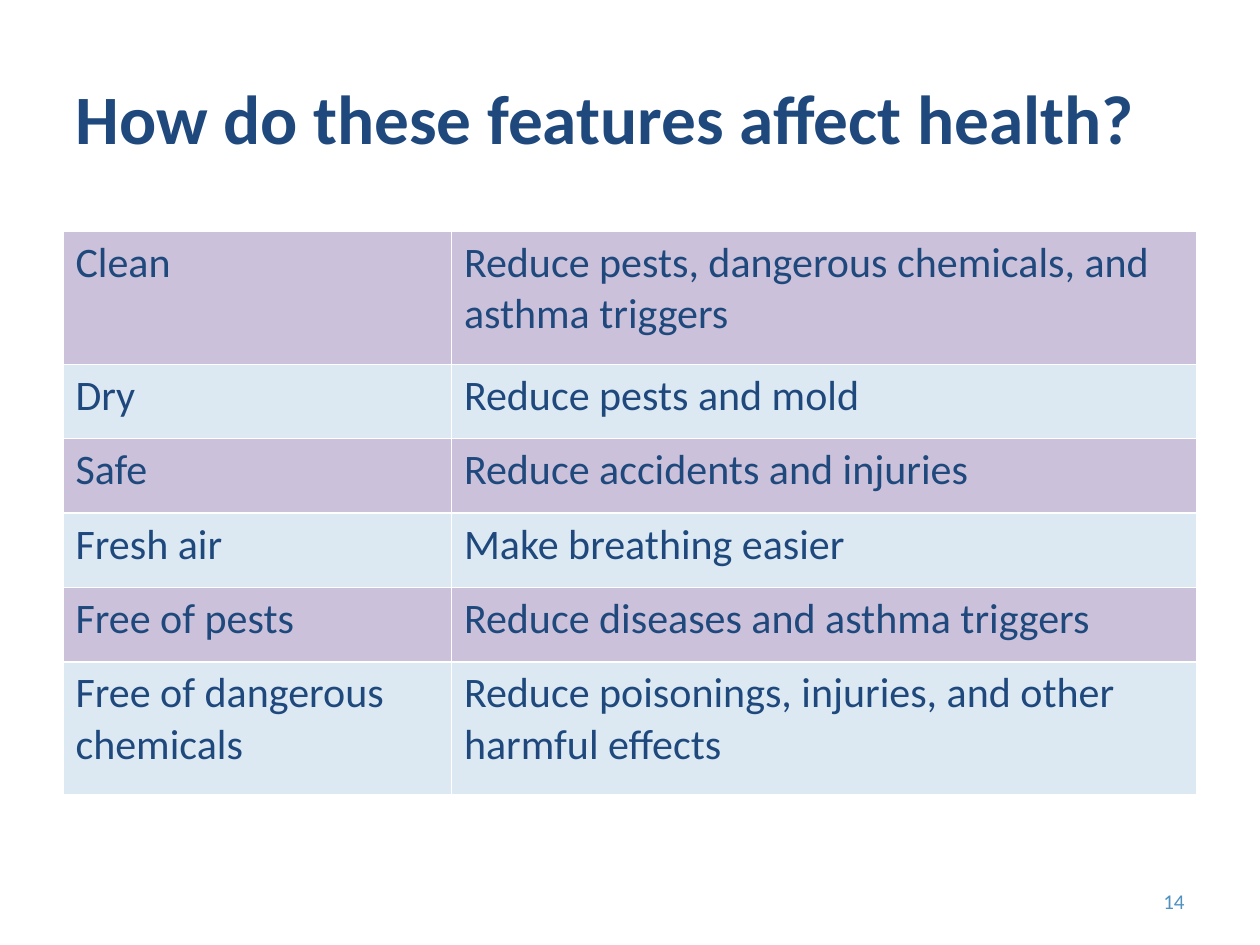
"""Build a slide that pairs healthy home features with their health effects."""
from dataclasses import dataclass
from typing import NamedTuple

from lxml import etree
from pptx import Presentation
from pptx.dml.color import RGBColor
from pptx.enum import text as t
from pptx.oxml import ns
from pptx.util import Pt


@dataclass(frozen=True)
class Theme:
    font: str = "Calibri"
    ink: str = "1F497D"
    page_ink: str = "4F91C0"
    bands: tuple[str, str] = ("CCC1DA", "DCE9F2")
    border: str = "FFFFFF"
    border_width: float = 1
    title_size: float = 39.6
    body_size: float = 24
    page_size: float = 12


class Box(NamedTuple):
    left: float
    top: float
    width: float
    height: float


class Feature(NamedTuple):
    name: str
    effect: str
    height: float


THEME = Theme()
SINGLE, DOUBLE = 42.5, 76.2
COLUMN_WIDTHS = (222, 426)
FEATURES = (
    Feature("Clean", "Reduce pests, dangerous chemicals, and asthma triggers", DOUBLE),
    Feature("Dry", "Reduce pests and mold", SINGLE),
    Feature("Safe", "Reduce accidents and injuries", SINGLE),
    Feature("Fresh air", "Make breathing easier", SINGLE),
    Feature("Free of pests", "Reduce diseases and asthma triggers", SINGLE),
    Feature("Free of dangerous chemicals",
            "Reduce poisonings, injuries, and other harmful effects", DOUBLE),
)


def write(frame, wording: str, size: float, color: str, bold: bool = False) -> None:
    """Fill a text frame with one styled paragraph."""
    frame.text = wording
    font = frame.paragraphs[0].runs[0].font
    font.name, font.size, font.bold = THEME.font, Pt(size), bold
    font.color.rgb = RGBColor.from_string(color)


def add_label(slide, box: Box, wording: str, size: float, color: str,
              align: t.PP_ALIGN = t.PP_ALIGN.LEFT, bold: bool = False) -> None:
    """Add a vertically centred line of text."""
    frame = slide.shapes.add_textbox(*map(Pt, box)).text_frame
    frame.word_wrap = True
    frame.vertical_anchor = t.MSO_ANCHOR.MIDDLE
    write(frame, wording, size, color, bold)
    frame.paragraphs[0].alignment = align


def outline(cell) -> None:
    """Draw the border on all four sides of a cell."""
    properties = cell._tc.get_or_add_tcPr()
    for position, side in enumerate(("lnL", "lnR", "lnT", "lnB")):
        line = etree.Element(ns.qn(f"a:{side}"), w=str(Pt(THEME.border_width)))
        fill = etree.SubElement(line, ns.qn("a:solidFill"))
        etree.SubElement(fill, ns.qn("a:srgbClr"), val=THEME.border)
        properties.insert(position, line)


def add_features(slide, box: Box) -> None:
    """Add the banded table of features and effects."""
    table = slide.shapes.add_table(
        len(FEATURES), len(COLUMN_WIDTHS), *map(Pt, box)).table
    table.first_row = table.horz_banding = False
    for column, width in zip(table.columns, COLUMN_WIDTHS):
        column.width = Pt(width)
    for index, (row, feature) in enumerate(zip(table.rows, FEATURES)):
        row.height = Pt(feature.height)
        band = RGBColor.from_string(THEME.bands[index % len(THEME.bands)])
        for cell, wording in zip(row.cells, (feature.name, feature.effect)):
            write(cell.text_frame, wording, THEME.body_size, THEME.ink)
            cell.fill.solid()
            cell.fill.fore_color.rgb = band
            outline(cell)


def main() -> None:
    """Assemble and save the slide."""
    deck = Presentation()
    deck.slide_width, deck.slide_height = Pt(720), Pt(540)
    slide = deck.slides.add_slide(deck.slide_layouts[6])
    add_label(slide, Box(36, 21.6, 648, 90), "How do these features affect health?",
              THEME.title_size, THEME.ink, bold=True)
    add_features(slide, Box(36, 132, sum(COLUMN_WIDTHS),
                            sum(feature.height for feature in FEATURES)))
    add_label(slide, Box(516, 500.5, 168, 28.8), "14", THEME.page_size,
              THEME.page_ink, t.PP_ALIGN.RIGHT)
    deck.save("out.pptx")


if __name__ == "__main__":
    main()
